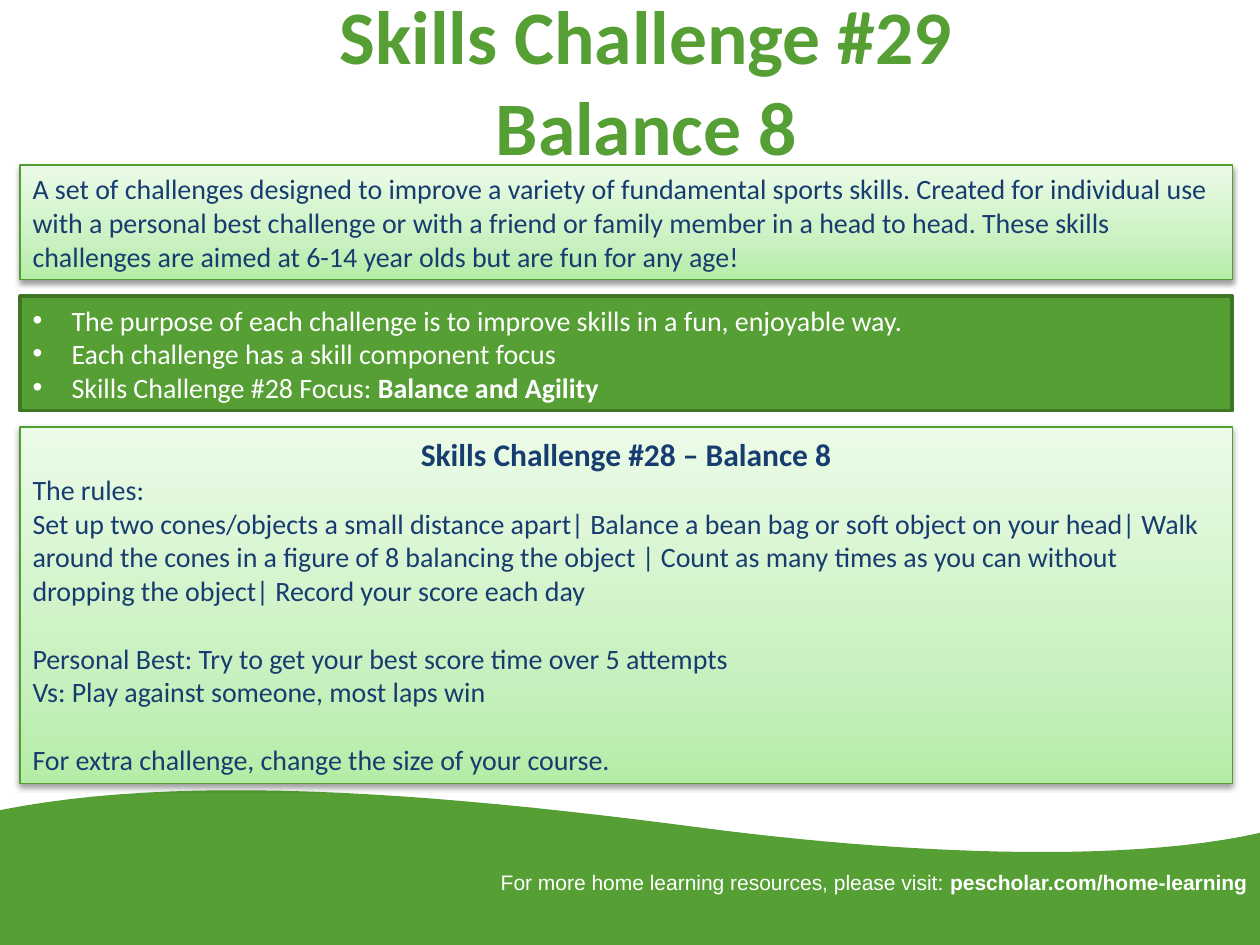
from copy import deepcopy
from dataclasses import dataclass

from lxml.etree import SubElement
from pptx import Presentation
from pptx.dml.color import RGBColor
from pptx.enum.shapes import MSO_SHAPE
from pptx.enum.text import MSO_ANCHOR, MSO_AUTO_SIZE, PP_ALIGN
from pptx.oxml.ns import qn
from pptx.util import Inches, Pt


@dataclass(frozen=True)
class Theme:
    green: str = "559F34"
    edge: str = "529E30"
    dark: str = "3F7626"
    navy: str = "173C6F"
    white: str = "FFFFFF"
    fade: tuple = ((0, "B4EDA7"), (0.35, "CBF1C2"), (1, "EBFBE7"))
    font: str = "Calibri"
    foot: str = "Arial"
    title: float = 43.2
    head: int = 18
    body: int = 16
    small: int = 12
    gap: float = 19.5


T = Theme()

INTRO = ("A set of challenges designed to improve a variety of fundamental sports "
         "skills. Created for individual use with a personal best challenge or with "
         "a friend or family member in a head to head. These skills challenges are "
         "aimed at 6-14 year olds but are fun for any age!")
GOALS = [
    ["The purpose of each challenge is to improve skills in a fun, enjoyable way."],
    ["Each challenge has a skill component focus"],
    ["Skills Challenge #28 Focus: ", "Balance and Agility"],
]
# Each group of rules is set apart by a line of space
RULES = [
    ["The rules:",
     "Set up two cones/objects a small distance apart| Balance a bean bag or soft "
     "object on your head| Walk around the cones in a figure of 8 balancing the "
     "object | Count as many times as you can without dropping the object| Record "
     "your score each day"],
    ["Personal Best: Try to get your best score time over 5 attempts",
     "Vs: Play against someone, most laps win"],
    ["For extra challenge, change the size of your course."],
]


def rgb(code):
    return RGBColor.from_string(code)


def style(run, size, color, bold=False, name=T.font):
    font = run.font
    font.name, font.size, font.bold = name, Pt(size), bold
    font.color.rgb = rgb(color)


def write(para, parts, size, color, bold=False, name=T.font, align=PP_ALIGN.LEFT):
    """Fill a paragraph; any part after the first is bold."""
    para.alignment = align
    for i, part in enumerate(parts):
        run = para.add_run()
        run.text = part
        style(run, size, color, bold or i > 0, name)


def panel(slide, box, line, width):
    shape = slide.shapes.add_shape(MSO_SHAPE.RECTANGLE, *map(Inches, box))
    shape.shadow.inherit = False
    shape.line.color.rgb = rgb(line)
    shape.line.width = Pt(width)
    shape.text_frame.word_wrap = True
    return shape


def fade(shape):
    """Pale green gradient with a soft shadow below."""
    fill = shape.fill
    fill.gradient()
    fill.gradient_angle = 90
    props = shape._element.spPr
    stops = props.find(qn("a:gradFill")).find(qn("a:gsLst"))
    stops.append(deepcopy(stops[-1]))
    for stop, (pos, color) in zip(fill.gradient_stops, T.fade):
        stop.position = pos
        stop.color.rgb = rgb(color)
    shade = SubElement(props.find(qn("a:effectLst")), qn("a:outerShdw"),
                       blurRad="40000", dist="20000", dir="5400000", rotWithShape="0")
    black = SubElement(shade, qn("a:srgbClr"), val="000000")
    SubElement(black, qn("a:alpha"), val="38000")


def bullet(para):
    props = para._p.get_or_add_pPr()
    props.set("marL", str(Inches(0.31)))
    props.set("indent", str(Inches(-0.31)))
    SubElement(props, qn("a:buFont"), typeface="Arial")
    SubElement(props, qn("a:buChar"), char="•")


def curve(a, b, c, d, steps=24):
    """Points along a cubic curve from a to d."""
    for i in range(steps + 1):
        t = i / steps
        u = 1 - t
        yield tuple(u**3 * p + 3 * u * u * t * q + 3 * u * t * t * r + t**3 * s
                    for p, q, r, s in zip(a, b, c, d))


def wave(slide, wide, high):
    left = list(curve((0, 6.43), (1.4, 6.15), (3.3, 6.27), (5.57, 6.57)))
    right = list(curve((5.57, 6.57), (7.1, 6.77), (8.9, 6.86), (wide, 6.61)))
    pts = [(Inches(x), Inches(y))
           for x, y in left + right[1:] + [(wide, high), (0, high)]]
    form = slide.shapes.build_freeform(*pts[0])
    form.add_line_segments(pts[1:], close=True)
    shape = form.convert_to_shape()
    shape.shadow.inherit = False
    shape.fill.solid()
    shape.fill.fore_color.rgb = rgb(T.green)
    shape.line.fill.background()


def heading(slide, box):
    title = slide.shapes.title
    title.left, title.top, title.width, title.height = map(Inches, box)
    frame = title.text_frame
    frame.text = "Skills Challenge #29\vBalance 8"
    frame.auto_size = MSO_AUTO_SIZE.NONE
    frame.vertical_anchor = MSO_ANCHOR.MIDDLE
    para = frame.paragraphs[0]
    para.alignment = PP_ALIGN.CENTER
    for run in para.runs:
        style(run, T.title, T.green, True)


def intro(slide, box):
    shape = panel(slide, box, T.edge, 0.75)
    fade(shape)
    write(shape.text_frame.paragraphs[0], [INTRO], T.body, T.navy)


def goals(slide, box):
    shape = panel(slide, box, T.dark, 2)
    shape.fill.solid()
    shape.fill.fore_color.rgb = rgb(T.green)
    frame = shape.text_frame
    for i, parts in enumerate(GOALS):
        para = frame.add_paragraph() if i else frame.paragraphs[0]
        bullet(para)
        write(para, parts, T.body, T.white)


def rules(slide, box):
    shape = panel(slide, box, T.edge, 0.75)
    fade(shape)
    frame = shape.text_frame
    write(frame.paragraphs[0], ["Skills Challenge #28 – Balance 8"], T.head, T.navy,
          bold=True, align=PP_ALIGN.CENTER)
    for i, group in enumerate(RULES):
        for j, line in enumerate(group):
            para = frame.add_paragraph()
            if i and not j:
                para.space_before = Pt(T.gap)
            write(para, [line], T.body, T.navy)


def footer(slide, box):
    frame = slide.shapes.add_textbox(*map(Inches, box)).text_frame
    frame.word_wrap = True
    parts = ["For more home learning resources, please visit: ",
             "pescholar.com/home-learning"]
    write(frame.paragraphs[0], parts, T.small, T.white, name=T.foot,
          align=PP_ALIGN.RIGHT)


def main():
    deck = Presentation()
    wide, high = 10, 7.5
    deck.slide_width, deck.slide_height = Inches(wide), Inches(high)
    slide = deck.slides.add_slide(deck.slide_layouts[5])
    wave(slide, wide, high)
    heading(slide, (0.63, 0.01, 9, 1.25))

    # Panels stacked with equal gaps
    top = 1.31
    for draw, tall in ((intro, 0.91), (goals, 0.91), (rules, 2.83)):
        draw(slide, (0.16, top, 9.62, tall))
        top += tall + 0.13

    footer(slide, (3.39, 6.85, 6.61, 0.3))
    deck.save("out.pptx")


if __name__ == "__main__":
    main()
